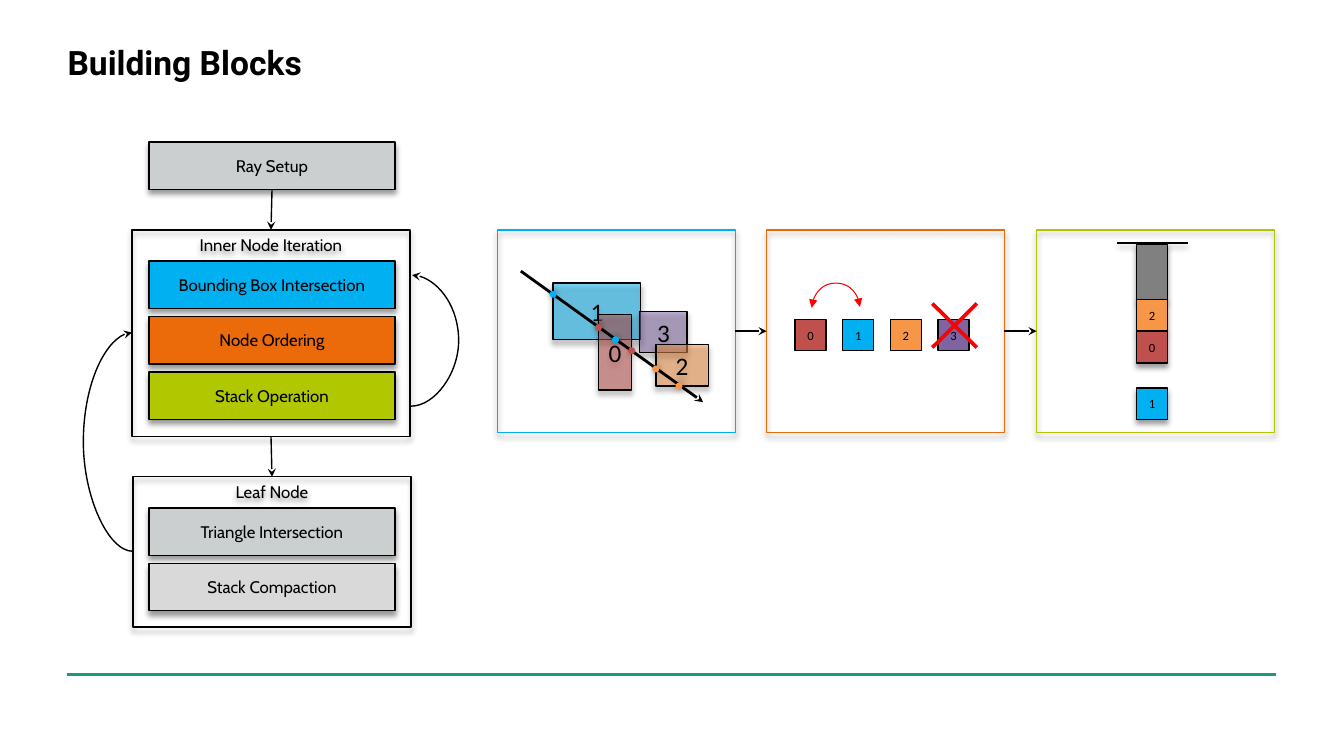
from lxml.etree import SubElement
from pptx import Presentation
from pptx.dml.color import RGBColor
from pptx.enum.shapes import MSO_CONNECTOR, MSO_SHAPE
from pptx.enum.text import MSO_ANCHOR, PP_ALIGN
from pptx.oxml.ns import qn
from pptx.util import Inches, Pt

BLACK = RGBColor(0x00, 0x00, 0x00)
RED = RGBColor(0xFF, 0x00, 0x00)
TEAL = RGBColor(0x17, 0x9C, 0x7D)
BLUE = RGBColor(0x00, 0xB0, 0xF0)
ORANGE = RGBColor(0xEB, 0x6A, 0x0A)
GREEN = RGBColor(0xB1, 0xC8, 0x00)
SILVER = RGBColor(0xCB, 0xCF, 0xCF)
LIGHT_GRAY = RGBColor(0xD9, 0xD9, 0xD9)
GRAY = RGBColor(0x80, 0x80, 0x80)
NODE_COLORS = [
    RGBColor(0xC0, 0x50, 0x4D),
    BLUE,
    RGBColor(0xF7, 0x96, 0x46),
    RGBColor(0x80, 0x64, 0xA2),
]

STAGE_FORMAT = {"name": "Cabin", "size": Pt(12)}
NODE_FORMAT = {"name": "Calibri", "size": Pt(9)}
BOUNDS_FORMAT = {"name": "Calibri", "size": Pt(18)}
TITLE_FORMAT = {"name": "Roboto", "size": Pt(24), "bold": True}

SOFT_SHADOW = {"blurRad": Pt(4), "dist": Pt(3), "dir": 5400000}
GLOW_SHADOW = {"blurRad": Pt(5), "dist": 0, "dir": 0}
BAR_LEFT, BAR_WIDTH, BAR_HEIGHT, BAR_STEP = 1.48, 2.44, 0.47, 0.55
NODE_SIZE = 0.31


def write_text(shape, text, text_format, align=PP_ALIGN.CENTER, anchor=MSO_ANCHOR.MIDDLE):
    """Put one formatted run of text in a shape."""
    frame = shape.text_frame
    frame.word_wrap = True
    frame.vertical_anchor = anchor
    paragraph = frame.paragraphs[0]
    paragraph.alignment = align
    run = paragraph.add_run()
    run.text = text
    for name, value in text_format.items():
        setattr(run.font, name, value)
    run.font.color.rgb = BLACK


def set_shadow(element, shadow):
    """Give a shape or connector the given shadow, or none."""
    properties = element._element.spPr
    effects = properties.find(qn("a:effectLst"))
    if effects is None:
        effects = SubElement(properties, qn("a:effectLst"))
    if shadow:
        outer = SubElement(effects, qn("a:outerShdw"), rotWithShape="0")
        for name, value in shadow.items():
            outer.set(name, str(int(value)))
        color = SubElement(outer, qn("a:srgbClr"), val=str(BLACK))
        SubElement(color, qn("a:alpha"), val="40000")


def add_block(slide, box, fill=None, line=BLACK, width=1, kind=MSO_SHAPE.RECTANGLE,
              shadow=SOFT_SHADOW, opacity=None):
    """Add a preset shape with its fill, outline and shadow."""
    shape = slide.shapes.add_shape(kind, *map(Inches, box))
    if fill is None:
        shape.fill.background()
    else:
        shape.fill.solid()
        shape.fill.fore_color.rgb = fill
    if opacity:
        color = shape._element.spPr.find(qn("a:solidFill"))[0]
        SubElement(color, qn("a:alpha"), val=str(opacity * 1000))
    if line is None:
        shape.line.fill.background()
    else:
        shape.line.color.rgb = line
        shape.line.width = Pt(width)
    shape.shadow.inherit = False
    set_shadow(shape, shadow)
    return shape


def add_line(slide, start, end, color=BLACK, width=1, tail="stealth", head=None,
             kind=MSO_CONNECTOR.STRAIGHT, shadow=None):
    """Add a connector with optional arrowheads."""
    connector = slide.shapes.add_connector(kind, *map(Inches, start + end))
    connector.line.color.rgb = color
    connector.line.width = Pt(width)
    outline = connector._element.spPr.find(qn("a:ln"))
    for tag, arrow in (("a:headEnd", head), ("a:tailEnd", tail)):
        if arrow:
            SubElement(outline, qn(tag), type=arrow)
    set_shadow(connector, shadow)
    return connector


def add_curve(slide, start, end, bulge, rotation=0, **options):
    """Add a curved connector that bulges out by the given length."""
    connector = add_line(slide, start, end, kind=MSO_CONNECTOR.CURVE, **options)
    properties = connector._element.spPr
    adjustments = properties.find(qn("a:prstGeom")).get_or_add_avLst()
    ratio = round(bulge / abs(end[0] - start[0]) * 100000)
    SubElement(adjustments, qn("a:gd"), name="adj1", fmla=f"val {ratio}")
    if rotation:
        properties.find(qn("a:xfrm")).set("rot", str(rotation * 60000))


def join(slide, first, first_side, second, second_side):
    """Draw an arrow between the side middles of two rectangles."""
    connector = add_line(slide, (0, 0), (1, 1))
    connector.begin_connect(first, first_side)
    connector.end_connect(second, second_side)


def add_bar(slide, top, text, fill):
    """Add one labelled step bar."""
    bar = add_block(slide, (BAR_LEFT, top, BAR_WIDTH, BAR_HEIGHT), fill)
    write_text(bar, text, STAGE_FORMAT)
    return bar


def add_stage(slide, box, title, steps):
    """Add a titled frame with its step bars."""
    frame = add_block(slide, box)
    write_text(frame, title, STAGE_FORMAT, anchor=MSO_ANCHOR.TOP)
    for index, (text, fill) in enumerate(steps):
        add_bar(slide, box[1] + 0.31 + index * BAR_STEP, text, fill)
    return frame


def add_node(slide, left, top, number, shadow=SOFT_SHADOW):
    """Add a small numbered node square."""
    box = (left, top, NODE_SIZE, NODE_SIZE)
    node = add_block(slide, box, NODE_COLORS[number], shadow=shadow)
    write_text(node, str(number), NODE_FORMAT)


def add_flow(slide):
    """Draw the traversal flow on the left."""
    inner = add_stage(slide, (1.31, 2.28, 2.76, 2.05), "Inner Node Iteration", [
        ("Bounding Box Intersection", BLUE),
        ("Node Ordering", ORANGE),
        ("Stack Operation", GREEN),
    ])
    leaf = add_stage(slide, (1.32, 4.73, 2.76, 1.49), "Leaf Node", [
        ("Triangle Intersection", SILVER),
        ("Stack Compaction", LIGHT_GRAY),
    ])
    setup = add_bar(slide, 1.41, "Ray Setup", SILVER)
    add_curve(slide, (1.32, 5.47), (1.31, 3.3), 0.5)
    join(slide, inner, 2, leaf, 0)
    join(slide, setup, 2, inner, 0)
    add_curve(slide, (4.08, 4.03), (4.09, 2.73), 0.48)


def add_ray_scene(slide):
    """Draw the ray crossing the bounding boxes."""
    bounds = [
        (1, (5.49, 2.81, 0.87, 0.56)),
        (0, (5.94, 3.12, 0.33, 0.75)),
        (3, (6.35, 3.09, 0.47, 0.41)),
        (2, (6.51, 3.42, 0.52, 0.41)),
    ]
    for number, box in bounds:
        shape = add_block(slide, box, NODE_COLORS[number], opacity=50)
        write_text(shape, str(number), BOUNDS_FORMAT)
    add_line(slide, (5.17, 2.69), (6.98, 3.99), width=2)
    hits = [(1, 5.47, 2.9), (1, 6.09, 3.35), (0, 5.92, 3.23),
            (0, 6.25, 3.46), (2, 6.49, 3.64), (2, 6.72, 3.81)]
    for number, left, top in hits:
        color = NODE_COLORS[number]
        add_block(slide, (left, top, 0.04, 0.04), color, color, 2, MSO_SHAPE.OVAL, GLOW_SHADOW)


def add_ordering(slide):
    """Draw the node ordering with a swap and a rejected node."""
    for number in range(4):
        add_node(slide, 7.89 + number * 1.42 / 3, 3.17, number, shadow=None)
    add_curve(slide, (8.3, 3.29), (8.29, 2.81), 0.25, rotation=90,
              color=RED, width=0.75, head="triangle", tail="triangle")
    cross = add_block(slide, (9.05, 2.81, 0.85, 0.84), RED, None,
                      kind=MSO_SHAPE.MATH_MULTIPLY, shadow=None)
    cross.adjustments[0] = 0.044


def add_node_stack(slide):
    """Draw the stack and the node taken from it."""
    add_line(slide, (11.09, 2.41), (11.79, 2.41), tail=None, shadow=SOFT_SHADOW)
    add_block(slide, (11.28, 2.42, NODE_SIZE, 0.56), GRAY)
    for number, top in ((2, 2.97), (0, 3.29), (1, 3.85)):
        add_node(slide, 11.28, top, number)


def add_panels(slide):
    """Frame the three details and link them in order."""
    panels = [add_block(slide, (left, 2.28, 2.36, 2.01), line=color)
              for left, color in ((4.94, BLUE), (7.61, ORANGE), (10.29, GREEN))]
    for first, second in zip(panels, panels[1:]):
        join(slide, first, 3, second, 1)


def add_title(slide):
    """Add the slide title and the footer rule."""
    add_line(slide, (0.67, 6.69), (12.67, 6.69), TEAL, 2.5, tail=None)
    title = slide.shapes.add_textbox(*map(Inches, (0.67, 0.42, 11.99, 0.4)))
    for side in ("left", "top", "right", "bottom"):
        setattr(title.text_frame, f"margin_{side}", 0)
    write_text(title, "Building Blocks", TITLE_FORMAT, PP_ALIGN.LEFT, MSO_ANCHOR.TOP)


def main():
    """Build the slide and save it."""
    presentation = Presentation()
    presentation.slide_width = Inches(13.34)
    presentation.slide_height = Inches(7.5)
    slide = presentation.slides.add_slide(presentation.slide_layouts[6])
    for draw in (add_title, add_flow, add_ray_scene, add_ordering, add_node_stack, add_panels):
        draw(slide)
    presentation.save("out.pptx")


if __name__ == "__main__":
    main()
